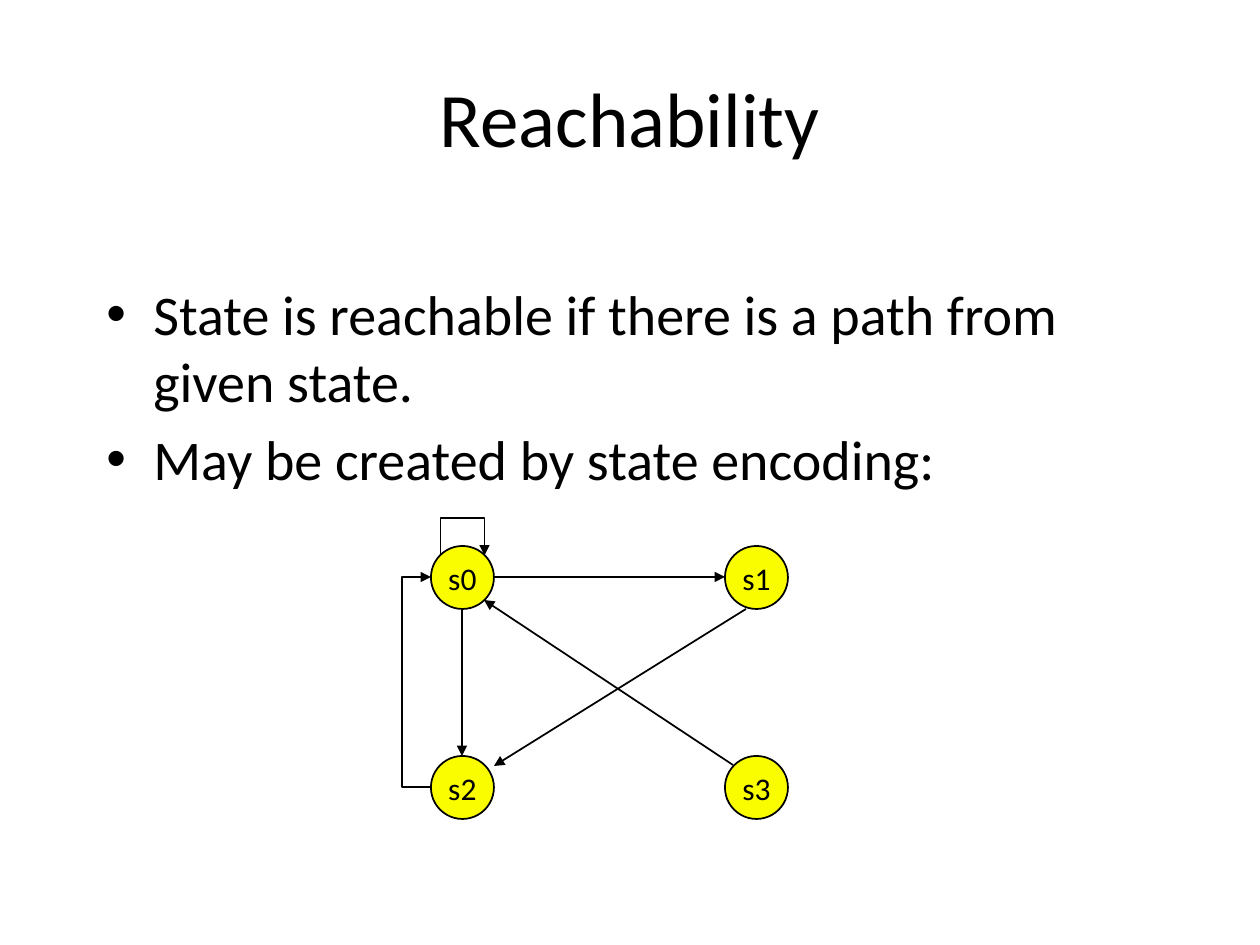
from lxml import etree
from pptx import Presentation
from pptx.dml.color import RGBColor
from pptx.enum.shapes import MSO_CONNECTOR, MSO_SHAPE
from pptx.enum.text import MSO_ANCHOR, PP_ALIGN
from pptx.oxml.ns import qn
from pptx.util import Emu, Pt

OVAL = MSO_SHAPE.OVAL
STRAIGHT, ELBOW = MSO_CONNECTOR.STRAIGHT, MSO_CONNECTOR.ELBOW
TOP, MIDDLE = MSO_ANCHOR.TOP, MSO_ANCHOR.MIDDLE
LEFT, CENTER = PP_ALIGN.LEFT, PP_ALIGN.CENTER

PX_PER_INCH = 126
FONT = "Calibri"
BLACK, YELLOW = "000000", "FAFD00"
DIAMETER = 63
INDENT = 47


def px(length):
    return Emu(round(length * 914400 / PX_PER_INCH))


def color(value):
    return RGBColor.from_string(value)


def add_run(paragraph, text, size, align):
    paragraph.alignment = align
    run = paragraph.add_run()
    run.text = text
    run.font.name = FONT
    run.font.size = Pt(size)
    run.font.color.rgb = color(BLACK)


def add_text_frame(slide, left, top, width, height, anchor):
    box = slide.shapes.add_textbox(px(left), px(top), px(width), px(height))
    frame = box.text_frame
    frame.word_wrap = True
    frame.vertical_anchor = anchor
    return frame


def add_title(slide, text):
    frame = add_text_frame(slide, 63, 38, 1134, 157, MIDDLE)
    add_run(frame.paragraphs[0], text, 44, CENTER)


def add_bullets(slide, items):
    frame = add_text_frame(slide, 94, 273, 1071, 252, TOP)
    for index, item in enumerate(items):
        paragraph = frame.add_paragraph() if index else frame.paragraphs[0]
        add_run(paragraph, item, 32, LEFT)
        paragraph.space_before = Pt(6.4)
        properties = paragraph._p.get_or_add_pPr()
        properties.set("marL", str(px(INDENT)))
        properties.set("indent", str(-px(INDENT)))
        etree.SubElement(properties, qn("a:buFont"), typeface="Arial")
        etree.SubElement(properties, qn("a:buChar"), char="•")


def add_state(slide, label, left, top):
    state = slide.shapes.add_shape(OVAL, px(left), px(top), px(DIAMETER), px(DIAMETER))
    state.shadow.inherit = False
    state.fill.solid()
    state.fill.fore_color.rgb = color(YELLOW)
    state.line.color.rgb = color(BLACK)
    state.line.width = Pt(1)
    frame = state.text_frame
    frame.word_wrap = False
    frame.vertical_anchor = MIDDLE
    add_run(frame.paragraphs[0], label, 18, CENTER)


def add_transition(slide, start, end, kind=STRAIGHT):
    arrow = slide.shapes.add_connector(kind, *(px(value) for value in start + end))
    arrow.line.color.rgb = color(BLACK)
    arrow.line.width = Pt(1)
    etree.SubElement(arrow.line._get_or_add_ln(), qn("a:tailEnd"), type="triangle")
    etree.SubElement(arrow._element.spPr, qn("a:effectLst"))
    return arrow


def add_detour(slide, x, start_y, end_y, reach, rotation=0):
    """Elbow one px wide whose middle leg lies reach px outside its start."""
    arrow = add_transition(slide, (x, start_y), (x + 1, end_y), ELBOW)
    properties = arrow._element.spPr
    properties.find(qn("a:xfrm")).set("rot", str(rotation * 60000))
    adjustments = properties.find(qn("a:prstGeom")).get_or_add_avLst()
    etree.SubElement(adjustments, qn("a:gd"), name="adj1", fmla=f"val {-reach * 100000}")


def main():
    presentation = Presentation()
    presentation.slide_width = px(1260)
    presentation.slide_height = px(945)
    slide = presentation.slides.add_slide(presentation.slide_layouts[6])

    add_title(slide, "Reachability")
    add_bullets(slide, [
        "State is reachable if there is a path from given state.",
        "May be created by state encoding:",
    ])

    # States on a two by two grid
    columns, rows = (431, 725), (546, 756)
    for number in range(4):
        add_state(slide, f"s{number}", columns[number % 2], rows[number // 2])

    # Straight transitions
    radius = DIAMETER // 2
    center_x, center_y = columns[0] + radius, rows[0] + radius
    add_transition(slide, (columns[0] + DIAMETER, center_y), (columns[1], center_y))
    add_transition(slide, (center_x, rows[0] + DIAMETER), (center_x, rows[1]))
    add_transition(slide, (746, 609), (494, 766))
    add_transition(slide, (733, 765), (484, 600))

    # s2 back to s0, and the loop of s0 on itself
    add_detour(slide, columns[0] - 1, rows[1] + radius, center_y, 28)
    loop_y, half_width = 555, 22
    add_detour(slide, center_x, loop_y + half_width, loop_y - half_width, 37, 90)

    presentation.save("out.pptx")


if __name__ == "__main__":
    main()
